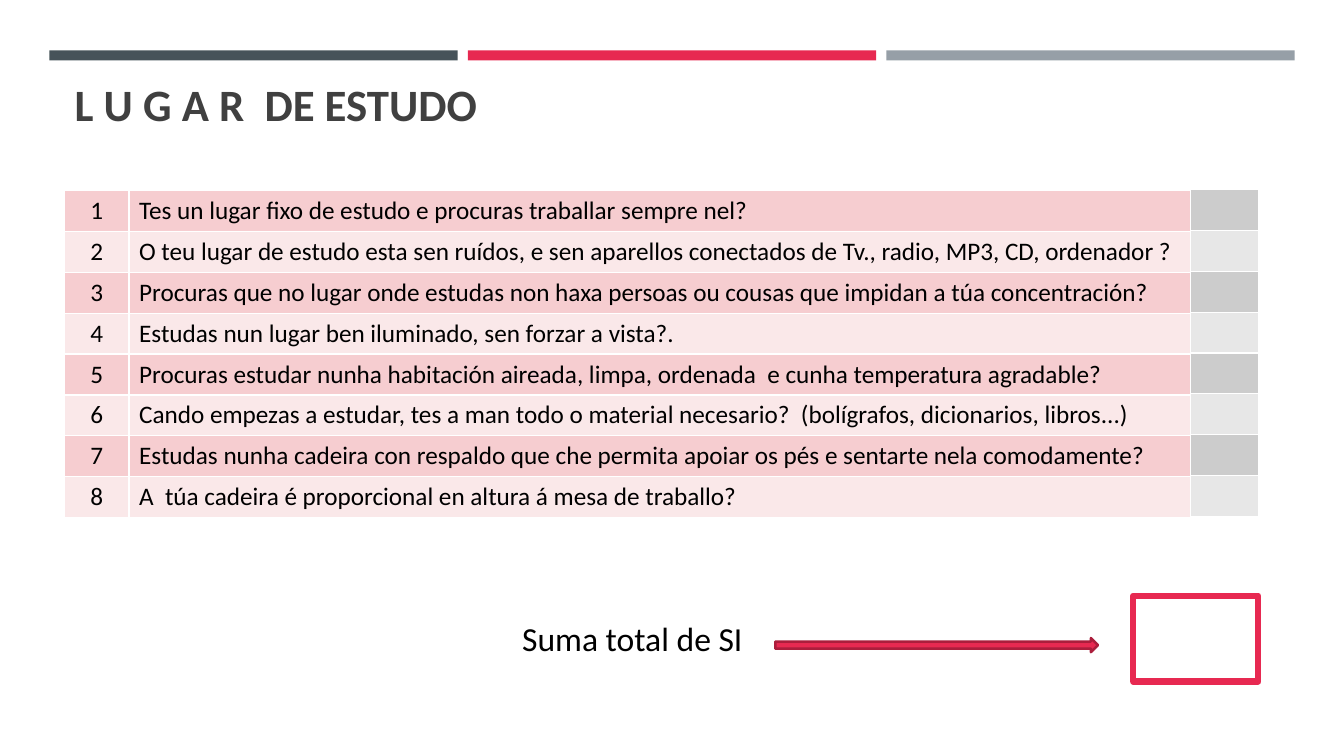
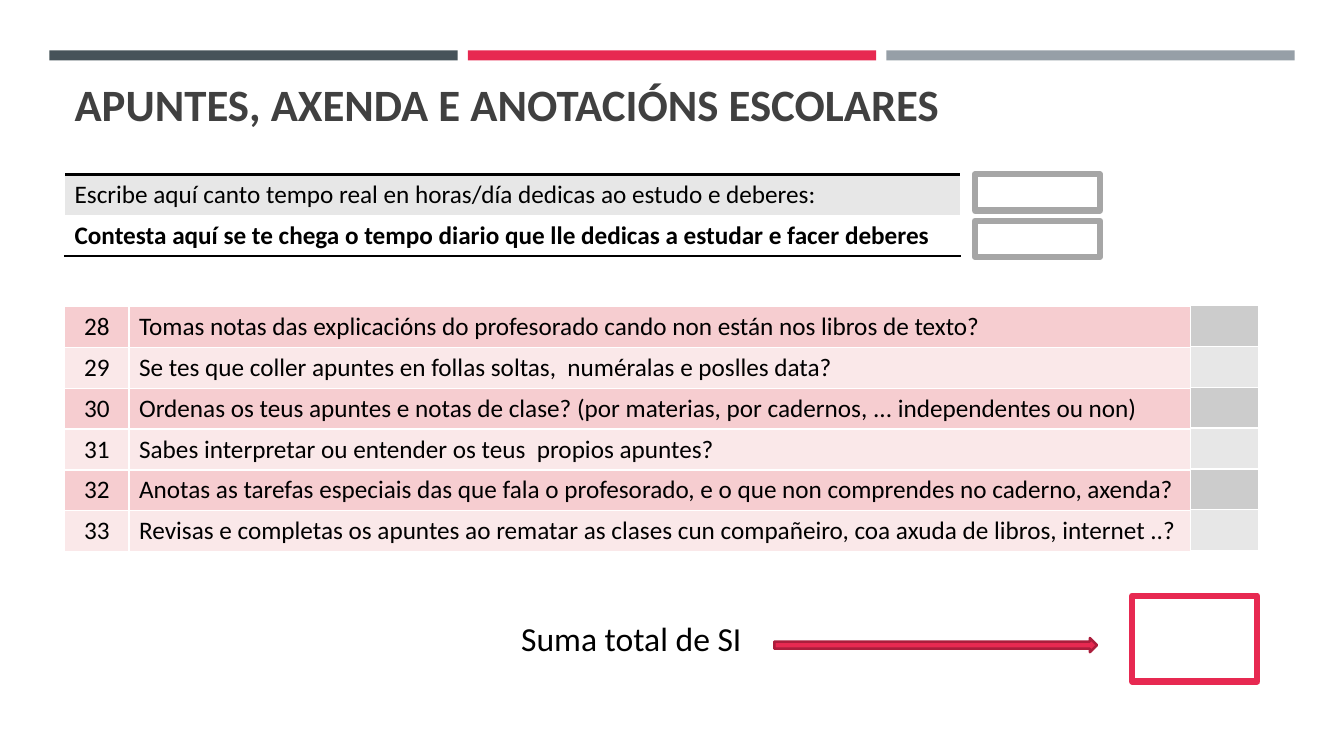
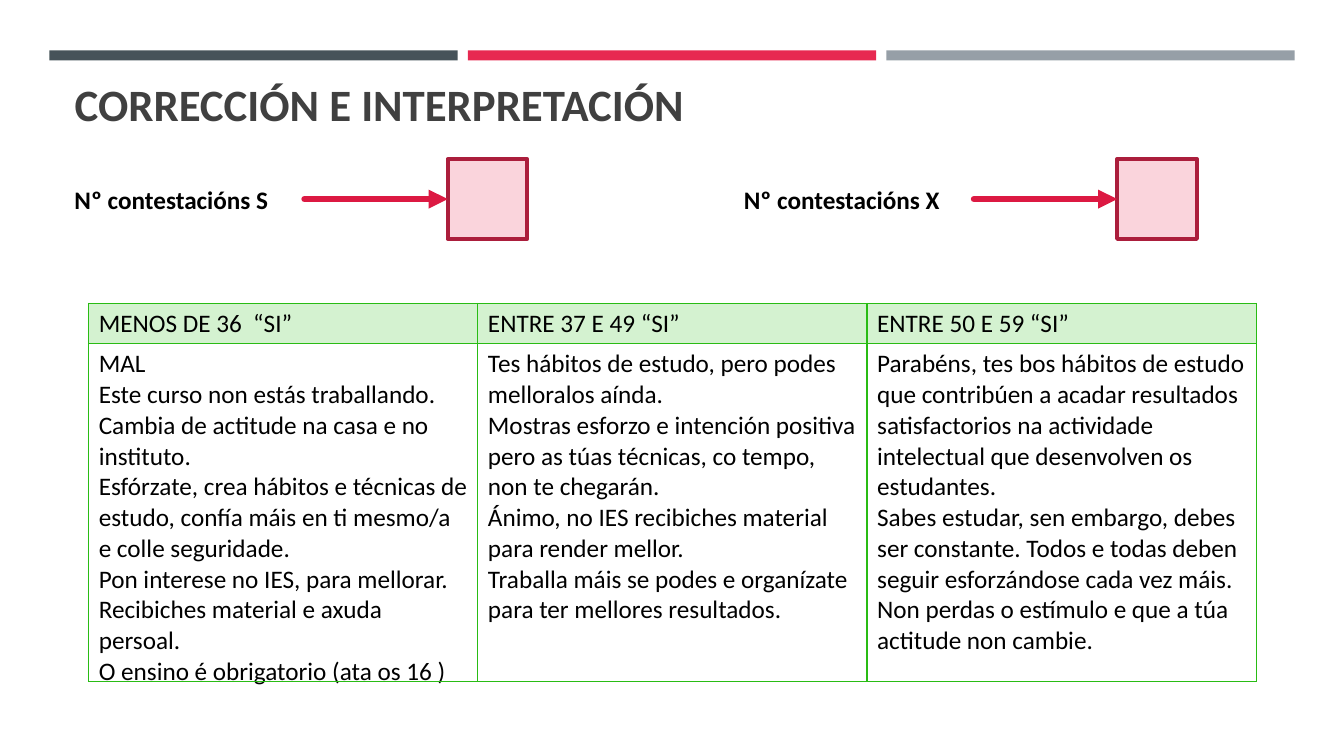
from lxml import etree
from pptx import Presentation
from pptx.dml.color import RGBColor
from pptx.enum.shapes import MSO_CONNECTOR, MSO_SHAPE
from pptx.enum.text import MSO_ANCHOR, MSO_AUTO_SIZE, PP_ALIGN
from pptx.oxml import parse_xml
from pptx.oxml.ns import qn
from pptx.util import Inches, Pt

RECTANGLE = MSO_SHAPE.RECTANGLE
RIGHT_ARROW = MSO_SHAPE.RIGHT_ARROW
STRAIGHT = MSO_CONNECTOR.STRAIGHT
TOP, BOTTOM = MSO_ANCHOR.TOP, MSO_ANCHOR.BOTTOM
LEFT, CENTER = PP_ALIGN.LEFT, PP_ALIGN.CENTER
NO_AUTOFIT = MSO_AUTO_SIZE.NONE

FONT = "Calibri"
BLACK = RGBColor(0x00, 0x00, 0x00)
WHITE = RGBColor(0xFF, 0xFF, 0xFF)
TITLE_GRAY = RGBColor(0x40, 0x40, 0x40)
SLATE = RGBColor(0x46, 0x53, 0x59)
CRIMSON = RGBColor(0xE7, 0x29, 0x51)
STEEL = RGBColor(0x96, 0x9F, 0xA7)
DARK_CRIMSON = RGBColor(0xAB, 0x1E, 0x3C)
ARROW_RED = RGBColor(0xDC, 0x19, 0x42)
PALE_CRIMSON = RGBColor(0xFA, 0xD4, 0xDC)
FRAME_GRAY = RGBColor(0xA6, 0xA6, 0xA6)
GREEN = RGBColor(0x29, 0xBC, 0x14)
PALE_GREEN = RGBColor(0xD4, 0xF2, 0xD0)
PINK_BANDS = (RGBColor(0xF6, 0xCD, 0xD0), RGBColor(0xFA, 0xE8, 0xE9))
GRAY_BANDS = (RGBColor(0xCC, 0xCC, 0xCC), RGBColor(0xE7, 0xE7, 0xE7))

ROW_HEIGHT = 0.4
ALL_SIDES = "LRTB"

PLACE_QUESTIONS = [
    "Tes un lugar fixo de estudo e procuras traballar sempre nel?",
    "O teu lugar de estudo esta sen ruídos, e sen aparellos conectados de Tv., radio, MP3, CD, ordenador ?",
    "Procuras que no lugar onde estudas non haxa persoas ou cousas que impidan a túa concentración?",
    "Estudas nun lugar ben iluminado, sen forzar a vista?.",
    "Procuras estudar nunha habitación aireada, limpa, ordenada  e cunha temperatura agradable?",
    "Cando empezas a estudar, tes a man todo o material necesario?  (bolígrafos, dicionarios, libros...)",
    "Estudas nunha cadeira con respaldo que che permita apoiar os pés e sentarte nela comodamente?",
    "A  túa cadeira é proporcional en altura á mesa de traballo?",
]
NOTES_QUESTIONS = [
    "Tomas notas das explicacións do profesorado cando non están nos libros de texto?",
    "Se tes que coller apuntes en follas soltas,  numéralas e poslles data?",
    "Ordenas os teus apuntes e notas de clase? (por materias, por cadernos, ... independentes ou non)",
    "Sabes interpretar ou entender os teus  propios apuntes?",
    "Anotas as tarefas especiais das que fala o profesorado, e o que non comprendes no caderno, axenda?",
    "Revisas e completas os apuntes ao rematar as clases cun compañeiro, coa axuda de libros, internet ..?",
]
TIME_PROMPTS = [
    "Escribe aquí canto tempo real en horas/día dedicas ao estudo e deberes:",
    "Contesta aquí se te chega o tempo diario que lle dedicas a estudar e facer deberes",
]
RESULTS = [
    ("MENOS DE 36  “SI”", [
        "MAL",
        "Este curso non estás traballando.",
        "Cambia de actitude na casa e no instituto.",
        "Esfórzate, crea hábitos e técnicas de estudo, confía máis en ti mesmo/a e colle seguridade.",
        "Pon interese no IES, para mellorar.",
        "Recibiches material e axuda persoal.",
        "O ensino é obrigatorio (ata os 16 )",
    ]),
    ("ENTRE 37 E 49 “SI”", [
        "Tes hábitos de estudo, pero podes melloralos aínda.",
        "Mostras esforzo e intención positiva pero as túas técnicas, co tempo, non te chegarán.",
        "Ánimo, no IES recibiches material para render mellor.",
        "Traballa máis se podes e organízate para ter mellores resultados.",
    ]),
    ("ENTRE 50 E 59 “SI”", [
        "Parabéns, tes bos hábitos de estudo que contribúen a acadar resultados satisfactorios "
        "na actividade intelectual que desenvolven os estudantes.",
        "Sabes estudar, sen embargo, debes ser constante. Todos e todas deben seguir "
        "esforzándose cada vez máis.",
        "Non perdas o estímulo e que a túa actitude non cambie.",
    ]),
]


def write(frame, text, size=18, color=BLACK, bold=False, align=LEFT, anchor=TOP):
    lines = [text] if isinstance(text, str) else text
    frame.word_wrap = True
    frame.vertical_anchor = anchor
    for index, line in enumerate(lines):
        para = frame.add_paragraph() if index else frame.paragraphs[0]
        para.alignment = align
        span = para.add_run()
        span.text = line
        span.font.name = FONT
        span.font.size = Pt(size)
        span.font.bold = bold
        span.font.color.rgb = color


def add_label(page, text, left, top, width, height, **style):
    box = page.shapes.add_textbox(Inches(left), Inches(top), Inches(width), Inches(height))
    write(box.text_frame, text, **style)


def add_box(page, left, top, width, height, fill, line=None, weight=0, kind=RECTANGLE):
    box = page.shapes.add_shape(kind, Inches(left), Inches(top), Inches(width), Inches(height))
    box.shadow.inherit = False
    box.fill.solid()
    box.fill.fore_color.rgb = fill
    if line is None:
        box.line.fill.background()
    else:
        box.line.color.rgb = line
        box.line.width = Pt(weight)
    return box


def add_grid(page, left, top, widths, heights):
    table = page.shapes.add_table(
        len(heights), len(widths), Inches(left), Inches(top),
        Inches(sum(widths)), Inches(sum(heights))).table
    table.first_row = False
    table.horz_banding = False
    for column, width in zip(table.columns, widths):
        column.width = Inches(width)
    for row, height in zip(table.rows, heights):
        row.height = Inches(height)
    return table


def style_cell(cell, fill=None, border=WHITE, weight=1, sides=ALL_SIDES):
    properties = cell._tc.get_or_add_tcPr()
    for side in sides:
        properties.append(parse_xml(
            f'<a:ln{side} xmlns:a="http://schemas.openxmlformats.org/drawingml/2006/main" '
            f'w="{Pt(weight)}"><a:solidFill><a:srgbClr val="{border}"/></a:solidFill></a:ln{side}>'))
    if fill is None:
        cell.fill.background()
    else:
        cell.fill.solid()
        cell.fill.fore_color.rgb = fill


def add_bands(page, layout):
    tree = layout.shapes._spTree
    for index, color in enumerate((SLATE, CRIMSON, STEEL)):
        band = add_box(page, 0.49 + index * 4.15, 0.5, 4.05, 0.1, color)
        band._element.nvSpPr.cNvPr.set("id", str(100 + index))
        tree.append(band._element)


def open_page(deck, layout, title):
    page = deck.slides.add_slide(layout)
    box = page.shapes.title
    box.left, box.top, box.width, box.height = (
        Inches(value) for value in (0.64, 0.77, 12.06, 0.57))
    write(box.text_frame, title, size=32, color=TITLE_GRAY, bold=True, anchor=BOTTOM)
    box.text_frame.auto_size = NO_AUTOFIT
    return page


def add_questions(page, left, top, first, questions):
    heights = [ROW_HEIGHT] * len(questions)
    table = add_grid(page, left, top, [0.64, 10.54], heights)
    answers = add_grid(page, left + 11.17, top - 0.01, [0.67], heights)
    for row, question in enumerate(questions):
        number, text = table.cell(row, 0), table.cell(row, 1)
        for cell in (number, text):
            style_cell(cell, PINK_BANDS[row % 2])
        write(number.text_frame, str(first + row), align=CENTER)
        write(text.text_frame, question)
        style_cell(answers.cell(row, 0), GRAY_BANDS[row % 2])


def add_total(page, left, top):
    add_label(page, "Suma total de SI", left, top + 0.17, 2.45, 0.5, size=24)
    add_box(page, left + 2.61, top + 0.42, 3.2, 0.14, CRIMSON, DARK_CRIMSON, 1.75, RIGHT_ARROW)
    add_box(page, left + 6.16, top, 1.24, 0.85, WHITE, CRIMSON, 4.5)


def add_time_prompts(page, left, top):
    table = add_grid(page, left, top, [8.89], [ROW_HEIGHT] * 2)
    formats = ((GRAY_BANDS[1], "T", False), (WHITE, "B", True))
    for row, (prompt, (fill, side, bold)) in enumerate(zip(TIME_PROMPTS, formats)):
        cell = table.cell(row, 0)
        style_cell(cell, fill, BLACK, 2, side)
        write(cell.text_frame, prompt, bold=bold)
        add_box(page, left + 9.03, top + row * 0.46, 1.24, 0.36, WHITE, FRAME_GRAY, 4.5)


def add_count(page, left, top, text):
    add_label(page, text, left, top + 0.2, 2.53, 0.4, bold=True)
    box = add_box(page, left + 3.8, top, 0.79, 0.79, PALE_CRIMSON, DARK_CRIMSON, 3)
    middle = Inches(top + 0.4)
    arrow = page.shapes.add_connector(
        STRAIGHT, Inches(left + 2.38), middle, Inches(left + 3.8), middle)
    arrow.end_connect(box, 1)
    arrow.begin_y = arrow.end_y
    arrow.line.color.rgb = ARROW_RED
    arrow.line.width = Pt(4.5)
    line = arrow.line._get_or_add_ln()
    line.set("cap", "rnd")
    etree.SubElement(line, qn("a:tailEnd")).set("type", "triangle")
    etree.SubElement(arrow._element.spPr, qn("a:effectLst"))


def add_results(page, left, top):
    table = add_grid(page, left, top, [3.86] * len(RESULTS), [0.38, 3.19])
    for column, (heading, advice) in enumerate(RESULTS):
        header, body = table.cell(0, column), table.cell(1, column)
        style_cell(header, PALE_GREEN, GREEN)
        write(header.text_frame, heading)
        style_cell(body, None, GREEN)
        body.margin_bottom = 0
        write(body.text_frame, advice)


def main():
    deck = Presentation()
    deck.slide_width, deck.slide_height = Inches(13.33), Inches(7.5)
    layout = deck.slide_layouts[5]

    place = open_page(deck, layout, "L U G A R  DE ESTUDO")
    add_bands(place, layout)
    add_questions(place, 0.64, 1.89, 1, PLACE_QUESTIONS)
    add_total(place, 5.08, 5.91)

    notes = open_page(deck, layout, "APUNTES, AXENDA E ANOTACIÓNS ESCOLARES")
    add_time_prompts(notes, 0.64, 1.73)
    add_questions(notes, 0.64, 3.04, 28, NOTES_QUESTIONS)
    add_total(notes, 5.07, 5.91)

    scoring = open_page(deck, layout, "CORRECCIÓN E INTERPRETACIÓN")
    add_count(scoring, 0.64, 1.58, "Nº contestacións S")
    add_count(scoring, 7.28, 1.58, "Nº contestacións X")
    add_results(scoring, 0.88, 3.01)

    deck.save("out.pptx")


if __name__ == "__main__":
    main()
